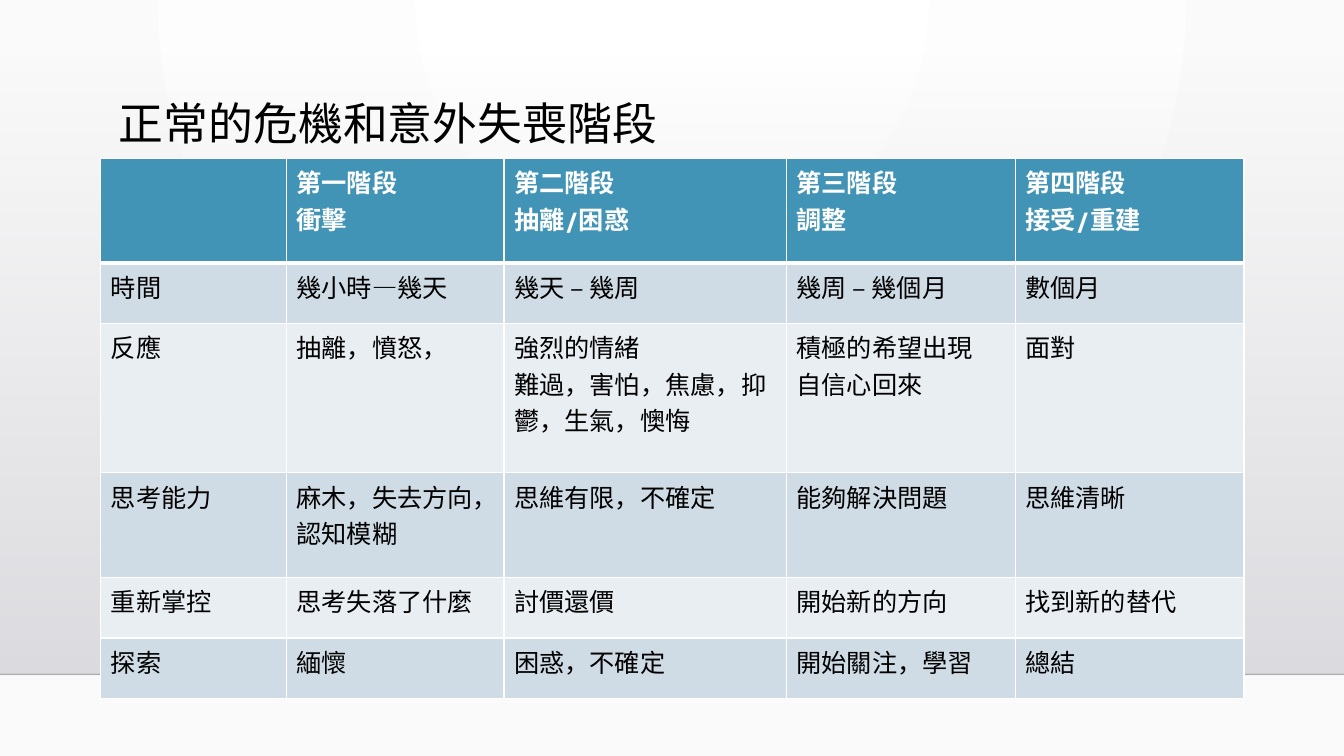
"""Build the slide on the normal stages of crisis and unexpected loss."""
from lxml.etree import SubElement
from pptx import Presentation
from pptx.dml.color import RGBColor
from pptx.enum.shapes import MSO_CONNECTOR, MSO_SHAPE
from pptx.enum.text import MSO_ANCHOR, PP_ALIGN
from pptx.oxml.ns import qn
from pptx.util import Pt

PX = 9144
FONT = "TeX Gyre Adventor"
COLORS = {
    "black": "000000", "white": "FFFFFF", "page": "FAFAFA",
    "wall_top": "DCDCE0", "wall_bottom": "DEDEE2", "floor": "000001",
    "header": "4294B6", "dark_band": "CFDCE5", "light_band": "E9EEF3",
}
COLS = [184, 216, 280, 227, 227]
ROWS = [104, 60, 148, 104, 60, 60]
CELLS = [
    ["", "第一階段\n衝擊", "第二階段\n抽離/困惑", "第三階段\n調整", "第四階段\n接受/重建"],
    ["時間", "幾小時—幾天", "幾天 – 幾周", "幾周 – 幾個月", "數個月"],
    ["反應", "抽離，憤怒，", "強烈的情緒\n難過，害怕，焦慮，抑鬱，生氣，懊悔",
     "積極的希望出現\n自信心回來", "面對"],
    ["思考能力", "麻木，失去方向，\n認知模糊", "思維有限，不確定", "能夠解決問題", "思維清晰"],
    ["重新掌控", "思考失落了什麼", "討價還價", "開始新的方向", "找到新的替代"],
    ["探索", "緬懷", "困惑，不確定", "開始關注，學習", "總結"],
]


def rgb(name):
    return RGBColor.from_string(COLORS[name])


def add_run(p, text, size, color, bold=False):
    r = p.add_run()
    r.text = text
    r.font.name, r.font.size, r.font.bold = FONT, Pt(size), bold
    r.font.color.rgb = rgb(color)


prs = Presentation()
prs.slide_width, prs.slide_height = 1333 * PX, 750 * PX
s = prs.slides.add_slide(prs.slide_layouts[5])

wall = s.shapes.add_shape(MSO_SHAPE.RECTANGLE, 0, 51 * PX, 1333 * PX, 618 * PX)
wall.shadow.inherit = False
wall.line.fill.background()
for fill, names in ((s.background.fill, ("white", "page")),
                    (wall.fill, ("wall_top", "wall_bottom"))):
    fill.gradient()
    for pos, (stop, name) in enumerate(zip(fill.gradient_stops, names)):
        stop.color.rgb = rgb(name)
        stop.position = pos
wall.fill.gradient_angle = 270
clear = wall.element.spPr.find(".//" + qn("a:srgbClr"))
SubElement(clear, qn("a:alpha"), val="0")

glow = s.element.find(".//" + qn("p:bgPr")).find(qn("a:gradFill"))
lin = glow.find(qn("a:lin"))
circle = SubElement(glow, qn("a:path"), path="circle")
SubElement(circle, qn("a:fillToRect"), l="43000", t="0", r="43000", b="100000")
glow.replace(lin, circle)

floor = s.shapes.add_connector(MSO_CONNECTOR.STRAIGHT, 0, 669 * PX, 1333 * PX, 669 * PX)
floor.line.width = Pt(1)
floor.line.color.rgb = rgb("floor")
SubElement(floor.element.spPr.find(".//" + qn("a:srgbClr")), qn("a:alpha"), val="20000")
SubElement(floor.element.spPr, qn("a:effectLst"))

title = s.shapes.title
title.left, title.top, title.width, title.height = 108 * PX, 96 * PX, 1133 * PX, 90 * PX
tf = title.text_frame
tf.vertical_anchor = MSO_ANCHOR.TOP
p = tf.paragraphs[0]
p.alignment = PP_ALIGN.LEFT
p.line_spacing = 0.9
add_run(p, "正常的危機和意外失喪階段", 32, "black")
s.shapes.element.append(title.element)

frame = s.shapes.add_table(len(ROWS), len(COLS), 100 * PX, 157 * PX,
                           sum(COLS) * PX, sum(ROWS) * PX)
table = frame.table
for col, width in zip(table.columns, COLS):
    col.width = width * PX
for i, (row, height) in enumerate(zip(table.rows, ROWS)):
    row.height = height * PX
    band = "header" if i == 0 else "dark_band" if i % 2 else "light_band"
    for cell, text in zip(row.cells, CELLS[i]):
        tcPr = cell._tc.get_or_add_tcPr()
        for side in ("lnL", "lnR", "lnT", "lnB"):
            thick = (i == 0 and side == "lnB") or (i == 1 and side == "lnT")
            ln = SubElement(tcPr, qn("a:" + side), w=str(Pt(3 if thick else 1)))
            solid = SubElement(ln, qn("a:solidFill"))
            SubElement(solid, qn("a:srgbClr"), val=COLORS["white"])
        cell.fill.solid()
        cell.fill.fore_color.rgb = rgb(band)
        tf = cell.text_frame
        for n, line in enumerate(text.split("\n")):
            p = tf.add_paragraph() if n else tf.paragraphs[0]
            if line:
                add_run(p, line, 18, "black" if i else "white", i == 0)

prs.save("out.pptx")
